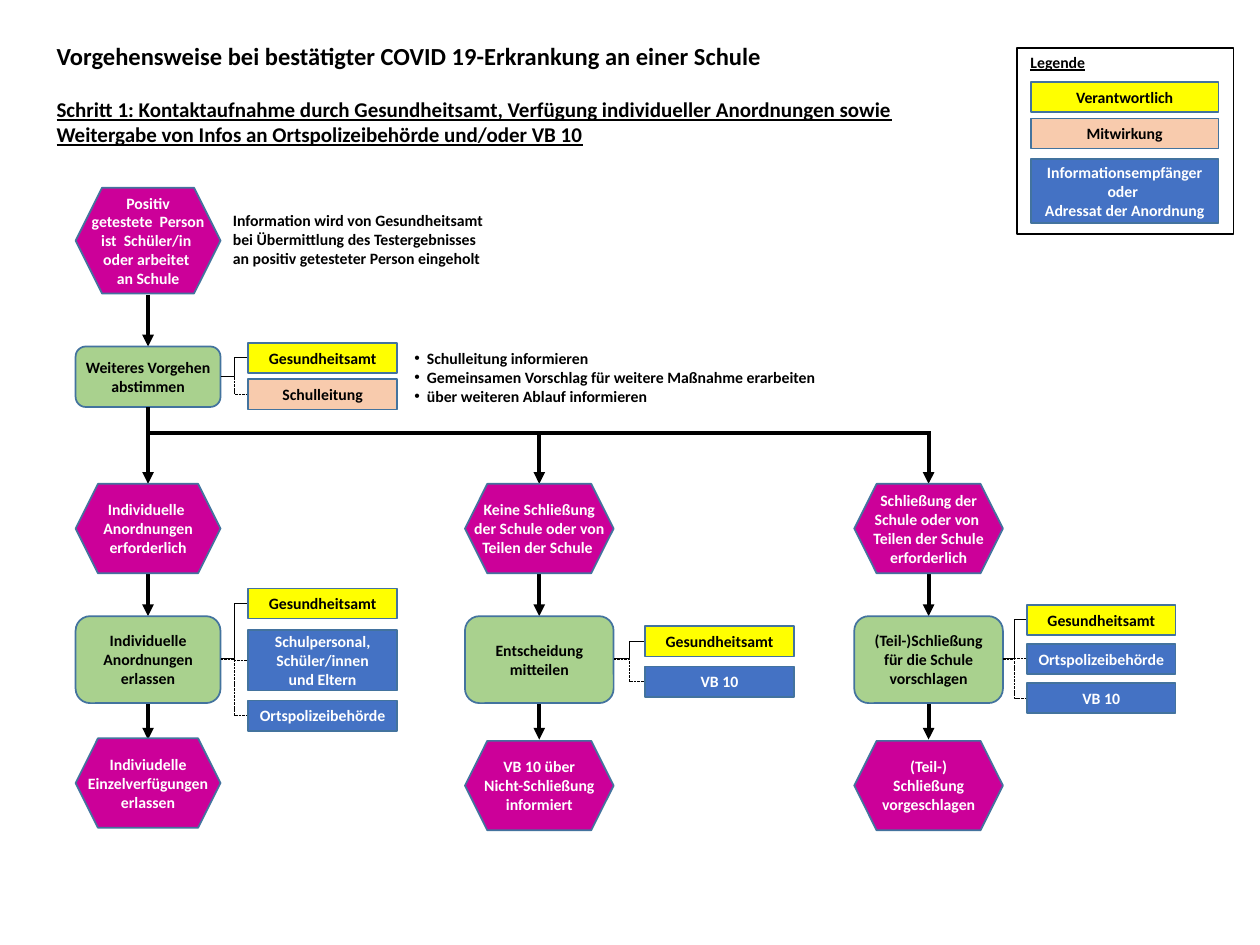
import copy

import pptx
import pptx.dml.color
import pptx.enum.dml
import pptx.enum.shapes
import pptx.enum.text
import pptx.oxml
import pptx.oxml.ns
import pptx.util
from pptx.util import Inches

SHAPE = pptx.enum.shapes.MSO_SHAPE
CONNECTOR = pptx.enum.shapes.MSO_CONNECTOR
ALIGN = pptx.enum.text.PP_ALIGN
COLORS = {
    "state": "CC0099", "step": "A9D18E", "responsible": "FFFF00",
    "support": "F8CBAD", "recipient": "4472C4", "outline": "43739E",
    "dark": "000000", "light": "FFFFFF",
}
LIGHT_TEXT_ROLES = ("state", "recipient")
ROW = 0.24


def rgb(name):
    return pptx.dml.color.RGBColor.from_string(COLORS[name])


def xml(tag, attributes=""):
    return pptx.oxml.parse_xml(f"<a:{tag} {pptx.oxml.ns.nsdecls('a')} {attributes}/>")


def write(paragraph, text, size=9, color="dark", underline=None, align=None,
          space_before=0, bullet=False):
    paragraph.text = text
    paragraph.alignment = align
    paragraph.space_before = pptx.util.Pt(space_before)
    for run in paragraph.runs:
        run.font.name = "Calibri"
        run.font.size = pptx.util.Pt(size)
        run.font.bold = True
        run.font.underline = underline
        run.font.color.rgb = rgb(color)
    for line_break in paragraph._p.findall(pptx.oxml.ns.qn("a:br")):
        line_break.insert(0, copy.deepcopy(paragraph.runs[0]._r.rPr))
    if bullet:
        properties = paragraph._p.get_or_add_pPr()
        properties.set("marL", str(Inches(0.1)))
        properties.set("indent", str(Inches(-0.1)))
        properties.append(xml("buFont", 'typeface="Arial"'))
        properties.append(xml("buChar", 'char="•"'))


def write_all(frame, texts, **formatting):
    for index, text in enumerate(texts):
        paragraph = frame.add_paragraph() if index else frame.paragraphs[0]
        write(paragraph, text, **formatting)


def label(slide, left, top, width, height, texts, wrap=False, **formatting):
    box = slide.shapes.add_textbox(Inches(left), Inches(top), Inches(width), Inches(height))
    frame = box.text_frame
    frame.word_wrap = wrap
    frame.auto_size = pptx.enum.text.MSO_AUTO_SIZE.SHAPE_TO_FIT_TEXT
    write_all(frame, texts, **formatting)
    return frame


def node(slide, left, top, width, height, role, *texts):
    preset = {"state": SHAPE.HEXAGON, "step": SHAPE.ROUNDED_RECTANGLE}.get(role, SHAPE.RECTANGLE)
    shape = slide.shapes.add_shape(
        preset, Inches(left), Inches(top), Inches(width), Inches(height))
    shape.shadow.inherit = False
    shape.fill.solid()
    shape.fill.fore_color.rgb = rgb(role)
    shape.line.color.rgb = rgb("outline")
    shape.line.width = pptx.util.Pt(1)
    frame = shape.text_frame
    frame.word_wrap = role != "state"
    frame.vertical_anchor = pptx.enum.text.MSO_ANCHOR.MIDDLE
    frame.margin_left = frame.margin_right = Inches(0.04)
    frame.margin_top = frame.margin_bottom = Inches(0.04)
    color = "light" if role in LIGHT_TEXT_ROLES else "dark"
    write_all(frame, texts, color=color, align=ALIGN.CENTER)


def connect(slide, x1, y1, x2, y2, kind=CONNECTOR.STRAIGHT, width=2.25,
            arrow=False, dashed=False):
    link = slide.shapes.add_connector(kind, Inches(x1), Inches(y1), Inches(x2), Inches(y2))
    link.line.color.rgb = rgb("dark")
    link.line.width = pptx.util.Pt(width)
    if dashed:
        link.line.dash_style = pptx.enum.dml.MSO_LINE.SQUARE_DOT
    if arrow:
        link.line._get_or_add_ln().append(xml("tailEnd", 'type="triangle"'))
    link._element.spPr.append(xml("effectLst"))


def actors(slide, step_right, step_middle, left, entries):
    for index, (role, top, height, *texts) in enumerate(entries):
        connect(slide, step_right, step_middle, left, top + height / 2,
                kind=CONNECTOR.ELBOW, width=0.5, dashed=index > 0)
        node(slide, left, top, 1.18, height, role, *texts)


def heading(slide, left, top, width, height):
    frame = label(slide, left, top, width, height,
                  ["Vorgehensweise bei bestätigter COVID 19-Erkrankung an einer Schule"],
                  wrap=True, size=14)
    write(frame.add_paragraph(),
          "Schritt 1: Kontaktaufnahme durch Gesundheitsamt, Verfügung individueller "
          "Anordnungen sowie Weitergabe von Infos an Ortspolizeibehörde und/oder VB 10",
          size=12, underline=True, space_before=14.65)


def legend(slide, left, top, width, height):
    for role, offset, row, text in (
        ("responsible", 0.27, ROW, "Verantwortlich"),
        ("support", 0.56, ROW, "Mitwirkung"),
        ("recipient", 0.88, 0.51, "Informationsempfänger\noder \nAdressat der Anordnung"),
    ):
        node(slide, left + 0.11, top + offset, 1.49, row, role, text)
    label(slide, left + 0.01, top - 0.01, 0.64, 0.25, ["Legende"], underline=True)
    border = slide.shapes.add_shape(
        SHAPE.RECTANGLE, Inches(left), Inches(top), Inches(width), Inches(height))
    border.shadow.inherit = False
    border.fill.background()
    border.line.color.rgb = rgb("dark")
    border.line.width = pptx.util.Pt(1)


def intake(slide, left, top, width):
    right, center = left + width, left + width / 2
    node(slide, left, top, width, 0.84, "state",
         "Positiv\n getestete  Person \nist  Schüler/in \noder arbeitet \nan Schule")
    label(slide, right, top + 0.13, 2.23, 0.55,
          ["Information wird von Gesundheitsamt\nbei Übermittlung des Testergebnisses \n"
           "an positiv getesteter Person eingeholt"])
    connect(slide, center, top + 0.85, center, top + 1.26, arrow=True)
    node(slide, left, top + 1.26, width, 0.48, "step", "Weiteres Vorgehen abstimmen")
    actors(slide, right, top + 1.5, left + 1.37, [
        ("responsible", top + 1.23, ROW, "Gesundheitsamt"),
        ("support", top + 1.52, ROW, "Schulleitung"),
    ])
    label(slide, left + 2.59, top + 1.23, 3.44, 0.56,
          ["Schulleitung informieren",
           "Gemeinsamen Vorschlag für weitere Maßnahme erarbeiten",
           "über weiteren Ablauf informieren"], bullet=True)


def branch(slide, left, top, width, condition, step, result, actor_left, entries,
           feed=0.0, result_top=2.44):
    center = left + width / 2
    for start, end in ((feed, 0.4), (1.1, 1.45), (2.13, 2.43)):
        connect(slide, center, top + start, center, top + end, arrow=True)
    node(slide, left, top + 0.4, width, 0.71, "state", condition)
    node(slide, left, top + 1.45, width, 0.69, "step", step)
    node(slide, left, top + result_top, width, 0.71, "state", result)
    actors(slide, left + width, top + 1.79, actor_left,
           [(role, top + offset, *rest) for role, offset, *rest in entries])


def main():
    deck = pptx.Presentation()
    deck.slide_width, deck.slide_height = Inches(10), Inches(7.5)
    slide = deck.slides.add_slide(deck.slide_layouts[6])
    heading(slide, 0.35, 0.28, 7.48, 0.94)
    legend(slide, 8.07, 0.38, 1.72, 1.48)
    intake(slide, 0.6, 1.49, 1.15)
    branch_top = 3.44
    connect(slide, 1.17, branch_top, 7.39, branch_top)
    branch(slide, 0.6, branch_top, 1.15,
           "Individuelle \nAnordnungen\nerforderlich",
           "Individuelle Anordnungen erlassen",
           "Indiviudelle\nEinzelverfügungen\nerlassen", 1.97, [
               ("responsible", 1.23, ROW, "Gesundheitsamt"),
               ("recipient", 1.56, 0.48, "Schulpersonal,", "Schüler/innen\nund Eltern"),
               ("recipient", 2.12, ROW, "Ortspolizeibehörde"),
           ], feed=-0.21, result_top=2.42)
    branch(slide, 3.69, branch_top, 1.18,
           "Keine Schließung\nder Schule oder von\nTeilen der Schule ",
           "Entscheidung\nmitteilen",
           "VB 10 über\nNicht-Schließung\ninformiert", 5.12, [
               ("responsible", 1.53, ROW, "Gesundheitsamt"),
               ("recipient", 1.85, ROW, "VB 10"),
           ])
    branch(slide, 6.78, branch_top, 1.18,
           "Schließung der\nSchule oder von \nTeilen der Schule\nerforderlich",
           "(Teil-)Schließung\nfür die Schule\nvorschlagen",
           "(Teil-)\nSchließung\nvorgeschlagen", 8.15, [
               ("responsible", 1.36, ROW, "Gesundheitsamt"),
               ("recipient", 1.67, ROW, "Ortspolizeibehörde"),
               ("recipient", 1.98, ROW, "VB 10"),
           ])
    deck.save("out.pptx")


if __name__ == "__main__":
    main()
